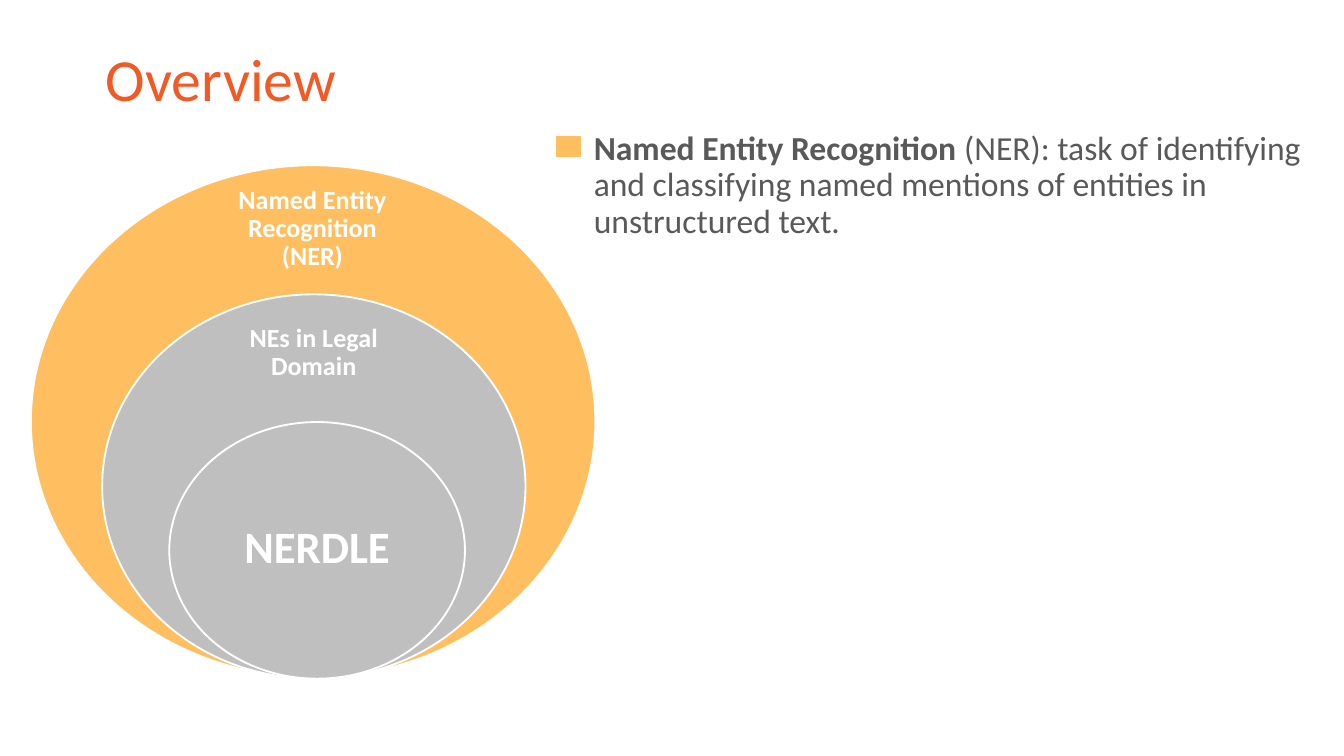
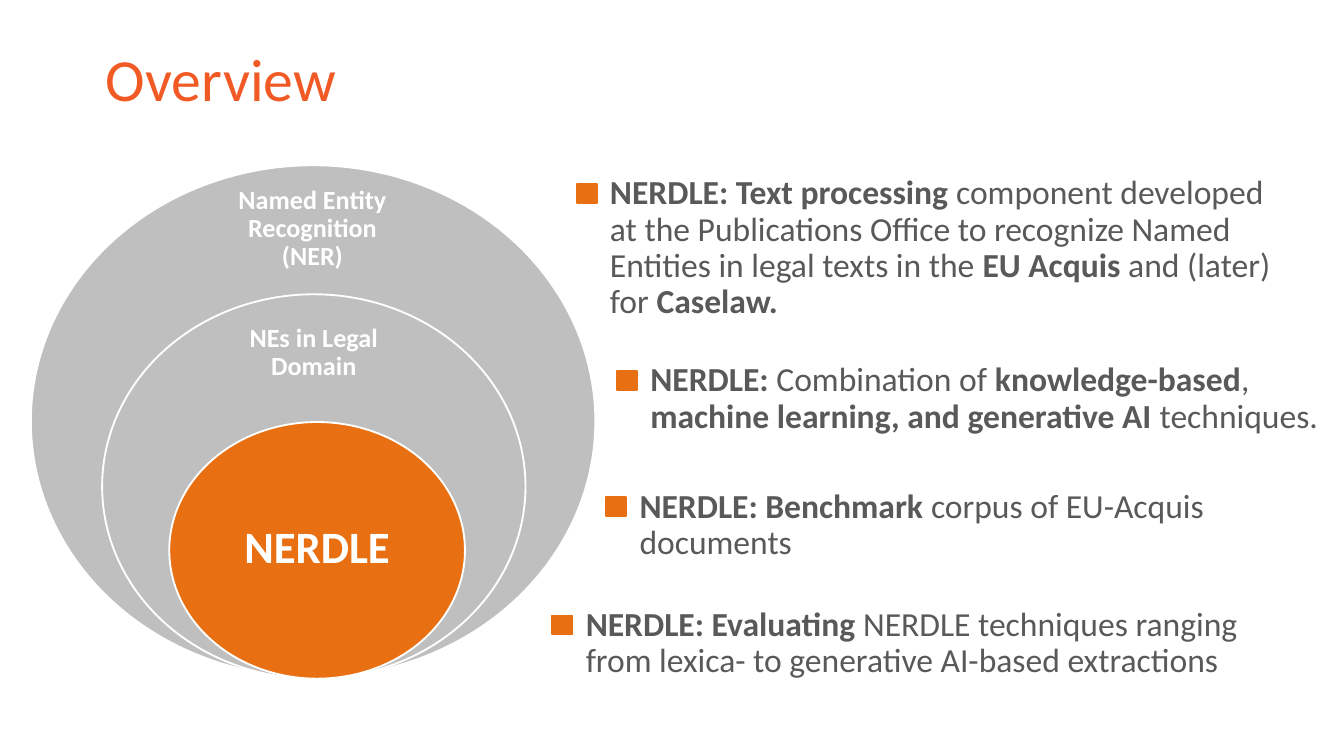
from dataclasses import dataclass

import pptx
import pptx.util
from pptx.dml.color import RGBColor
from pptx.enum.shapes import MSO_SHAPE
from pptx.enum.text import MSO_ANCHOR, PP_ALIGN

PX = 4572  # 200 px to the inch


@dataclass(frozen=True)
class Theme:
    font: str = "Calibri"
    title: str = "F15A24"
    body: str = "595959"
    white: str = "FFFFFF"
    muted: str = "BFBFBF"
    amber: str = "FFBF61"
    orange: str = "E87012"
    title_size: int = 32
    body_size: int = 18
    label_size: int = 14
    core_size: int = 24


T = Theme()


def add_shape(s, kind, box, fill, line):
    sp = s.shapes.add_shape(kind, *(v * PX for v in box))
    sp.shadow.inherit = False
    sp.fill.solid()
    sp.fill.fore_color.rgb = RGBColor.from_string(fill)
    sp.line.color.rgb = RGBColor.from_string(line)
    sp.line.width = pptx.util.Pt(1)


def add_text(s, box, parts, size, color, first_bold=False, centred=False,
             anchor=MSO_ANCHOR.MIDDLE, inset=None):
    """Add one paragraph whose parts alternate between bold and regular."""
    tf = s.shapes.add_textbox(*(v * PX for v in box)).text_frame
    tf.word_wrap = True
    tf.vertical_anchor = anchor
    if inset:
        tf.margin_left = tf.margin_right = inset * PX
        tf.margin_top = tf.margin_bottom = inset * PX
    p = tf.paragraphs[0]
    p.line_spacing = 0.9
    if centred:
        p.alignment = PP_ALIGN.CENTER
    p.font.name = T.font
    p.font.size = pptx.util.Pt(size)
    p.font.color.rgb = RGBColor.from_string(color)
    if len(parts) == 1:
        p.font.bold = first_bold
    for i, part in enumerate(parts):
        r = p.add_run()
        r.text = part
        if len(parts) > 1:
            r.font.bold = (i % 2 == 0) == first_bold


# Nested circles, outermost first: ellipse, label box, label, size, inset
CIRCLES = [
    ((46, 246, 840, 762), (318, 284, 294, 114),
     "Named Entity Recognition (NER)", T.label_size, 22),
    ((152, 438, 630, 572), (320, 472, 294, 108),
     "NEs in Legal Domain", T.label_size, 22),
    ((252, 628, 440, 382), (316, 722, 312, 190), "NERDLE", T.core_size, 38),
]

# Per slide: circle fills, marker colour, width and drop, points (box, parts)
SLIDES = [
    ((T.amber, T.muted, T.muted), T.amber, 36, 18, [
        ((864, 186, 1114, 184),
         ["Named Entity Recognition ",
          "(NER): task of identifying and classifying named mentions of "
          "entities in unstructured text."]),
    ]),
    ((T.muted, T.muted, T.orange), T.orange, 30, 22, [
        ((888, 252, 1036, 320),
         ["NERDLE: Text processing ",
          "component developed at the Publications Office to recognize Named "
          "Entities in legal texts in the ",
          "EU Acquis ", "and (later) for ", "Caselaw."]),
        ((948, 530, 1036, 212),
         ["NERDLE: ", "Combination of ", "knowledge-based", ", ",
          "machine learning, and generative AI ", "techniques."]),
        ((932, 718, 1036, 294),
         ["NERDLE: Benchmark", " corpus of EU-Acquis documents"]),
        ((852, 894, 1036, 212),
         ["NERDLE: Evaluating",
          " NERDLE techniques ranging from lexica- to generative AI-based "
          "extractions"]),
    ]),
]

prs = pptx.Presentation()
prs.slide_width = 2000 * PX
prs.slide_height = 1125 * PX

for fills, accent, marker_width, drop, points in SLIDES:
    s = prs.slides.add_slide(prs.slide_layouts[6])
    add_text(s, (138, 60, 1724, 126), ["Overview"], T.title_size, T.title)

    for (ellipse, label_box, label, size, inset), fill in zip(CIRCLES, fills):
        add_shape(s, MSO_SHAPE.OVAL, ellipse, fill, T.white)
        add_text(s, label_box, [label], size, T.white, first_bold=True,
                 centred=True, inset=inset)

    for box, parts in points:
        add_text(s, box, parts, T.body_size, T.body, first_bold=True,
                 anchor=MSO_ANCHOR.TOP)
        marker = (box[0] - marker_width, box[1] + drop, marker_width, 28)
        add_shape(s, MSO_SHAPE.RECTANGLE, marker, accent, accent)

prs.save("out.pptx")
